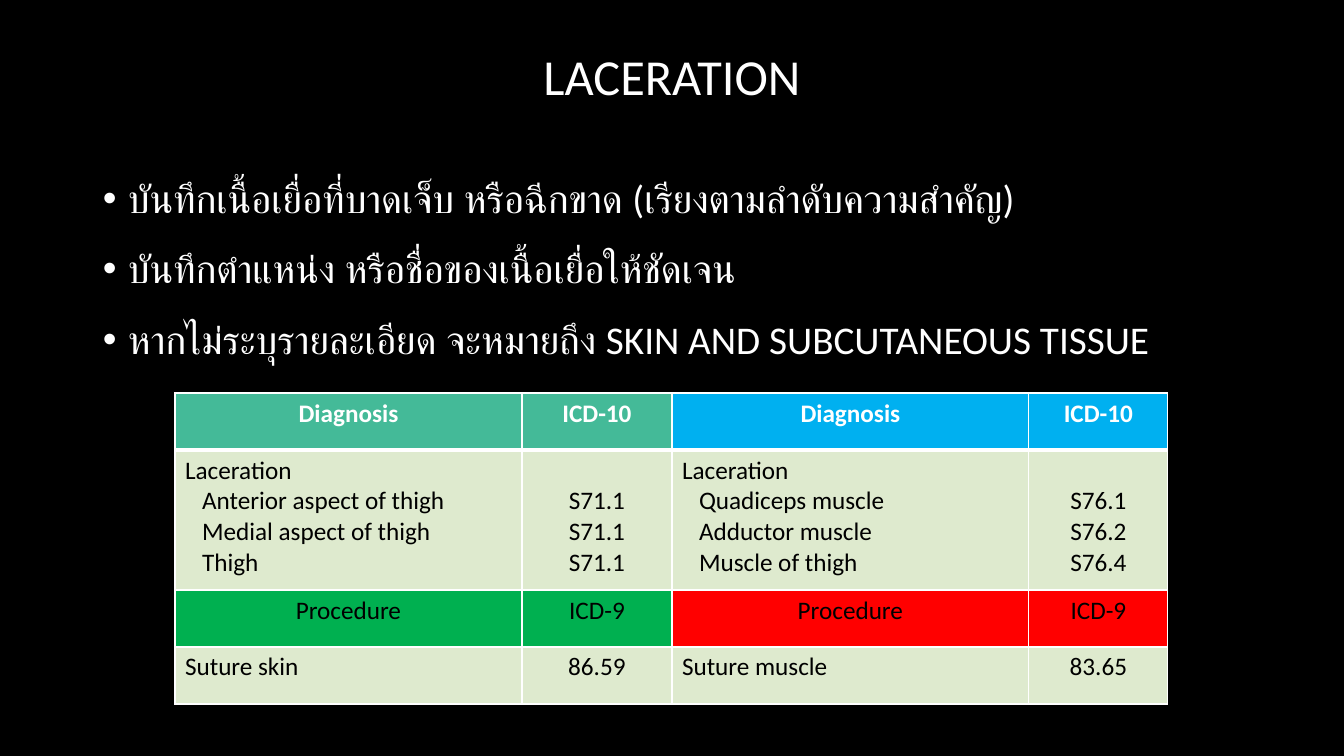
from dataclasses import dataclass

import pptx
import pptx.dml.color
import pptx.enum.text
import pptx.oxml
import pptx.oxml.ns
import pptx.util

CENTER = pptx.enum.text.PP_ALIGN.CENTER
LEFT = pptx.enum.text.PP_ALIGN.LEFT


@dataclass(frozen=True)
class Theme:
    font: str = "Calibri"
    background: str = "000000"
    light: str = "FFFFFF"
    dark: str = "000000"
    teal: str = "44BA98"
    blue: str = "00B0F0"
    green: str = "00B050"
    red: str = "FF0000"
    pale: str = "DEEACE"
    title_size: int = 36
    body_size: int = 28
    table_size: int = 18


def px(length):
    return pptx.util.Emu(round(length * 914400 / 100.8))


def rgb(color):
    return pptx.dml.color.RGBColor.from_string(color)


def xml(tag, attributes, inner=""):
    namespace = pptx.oxml.ns.nsdecls("a")
    return pptx.oxml.parse_xml(f"<a:{tag} {namespace} {attributes}>{inner}</a:{tag}>")


class SlideBuilder:
    def __init__(self, slide, theme):
        self.slide = slide
        self.theme = theme
        slide.background.fill.solid()
        slide.background.fill.fore_color.rgb = rgb(theme.background)

    def style(self, paragraph, size, color, bold=False):
        font = paragraph.font
        font.name = self.theme.font
        font.size = pptx.util.Pt(size)
        font.bold = bold
        font.color.rgb = rgb(color)

    def text(self, box, lines, size, spacing, align=LEFT, bulleted=False):
        frame = self.slide.shapes.add_textbox(*map(px, box)).text_frame
        frame.word_wrap = True
        frame.vertical_anchor = pptx.enum.text.MSO_ANCHOR.MIDDLE
        frame.text = "\n".join(lines)
        for index, paragraph in enumerate(frame.paragraphs):
            paragraph.alignment = align
            paragraph.line_spacing = spacing
            if index:
                paragraph.space_before = pptx.util.Pt(10)
            if bulleted:
                self.bullet(paragraph)
            self.style(paragraph, size, self.theme.light)

    def bullet(self, paragraph):
        properties = paragraph._p.get_or_add_pPr()
        properties.set("marL", str(px(25)))
        properties.set("indent", str(-px(25)))
        properties.append(xml("buClr", "", f'<a:srgbClr val="{self.theme.light}"/>'))
        properties.append(xml("buFont", 'typeface="Arial"'))
        properties.append(xml("buChar", 'char="•"'))

    def table(self, left, top, widths, heights, rows, fills):
        frame = self.slide.shapes.add_table(
            len(rows), len(widths), px(left), px(top), px(sum(widths)), px(sum(heights)))
        table = frame.table
        for column, width in zip(table.columns, widths):
            column.width = px(width)
        for row, height in zip(table.rows, heights):
            row.height = px(height)
        for r, contents in enumerate(rows):
            for c, content in enumerate(contents):
                self.cell(table.cell(r, c), content, fills[r][c // 2], r, c)

    def cell(self, cell, lines, fill, row, column):
        theme = self.theme
        is_header = row == 0
        is_code = column % 2 == 1
        is_heading = row % 2 == 0
        cell.text = "\n".join(lines)
        for index, paragraph in enumerate(cell.text_frame.paragraphs):
            paragraph.alignment = CENTER if is_code or is_heading else LEFT
            if index and not is_code:
                paragraph._p.get_or_add_pPr().set("marL", str(px(17)))
            self.style(paragraph, theme.table_size,
                       theme.light if is_header else theme.dark, is_header)
        if is_code and len(lines) > 1:
            cell.margin_top = px(36)  # codes start beside the second line
        cell.fill.solid()
        cell.fill.fore_color.rgb = rgb(fill)
        thick_side = {0: "lnB", 1: "lnT"}.get(row)
        for index, side in enumerate(("lnL", "lnR", "lnT", "lnB")):
            width = pptx.util.Pt(3 if side == thick_side else 1)
            line = f'<a:solidFill><a:srgbClr val="{theme.light}"/></a:solidFill>'
            cell._tc.get_or_add_tcPr().insert(index, xml(side, f'w="{width}"', line))


def main():
    theme = Theme()
    deck = pptx.Presentation()
    deck.slide_width, deck.slide_height = px(1344), px(756)
    builder = SlideBuilder(deck.slides.add_slide(deck.slide_layouts[6]), theme)

    # Title
    builder.text((101, 10, 1142, 139), ["LACERATION"], theme.title_size, 0.9, CENTER)

    # Recording rules
    recording_rules = [
        "บันทึกเนื้อเยื่อที่บาดเจ็บ หรือฉีกขาด (เรียงตามลำดับความสำคัญ)",
        "บันทึกตำแหน่ง หรือชื่อของเนื้อเยื่อให้ชัดเจน",
        "หากไม่ระบุรายละเอียด จะหมายถึง SKIN AND SUBCUTANEOUS TISSUE",
    ]
    builder.text((93, 149, 1159, 229), recording_rules, theme.body_size, 1.2, bulleted=True)

    # Diagnosis and procedure codes: skin on the left, muscle on the right
    skin_sites = ["Laceration", "Anterior aspect of thigh", "Medial aspect of thigh", "Thigh"]
    muscle_sites = ["Laceration", "Quadiceps muscle", "Adductor muscle", "Muscle of thigh"]
    code_rows = [
        [["Diagnosis"], ["ICD-10"]] * 2,
        [skin_sites, ["S71.1"] * 3, muscle_sites, ["S76.1", "S76.2", "S76.4"]],
        [["Procedure"], ["ICD-9"]] * 2,
        [["Suture skin"], ["86.59"], ["Suture muscle"], ["83.65"]],
    ]
    half_fills = [
        (theme.teal, theme.blue),
        (theme.pale, theme.pale),
        (theme.green, theme.red),
        (theme.pale, theme.pale),
    ]
    builder.table(175, 393, (347, 150, 357, 139), (57, 140, 57, 57), code_rows, half_fills)

    deck.save("out.pptx")


if __name__ == "__main__":
    main()
